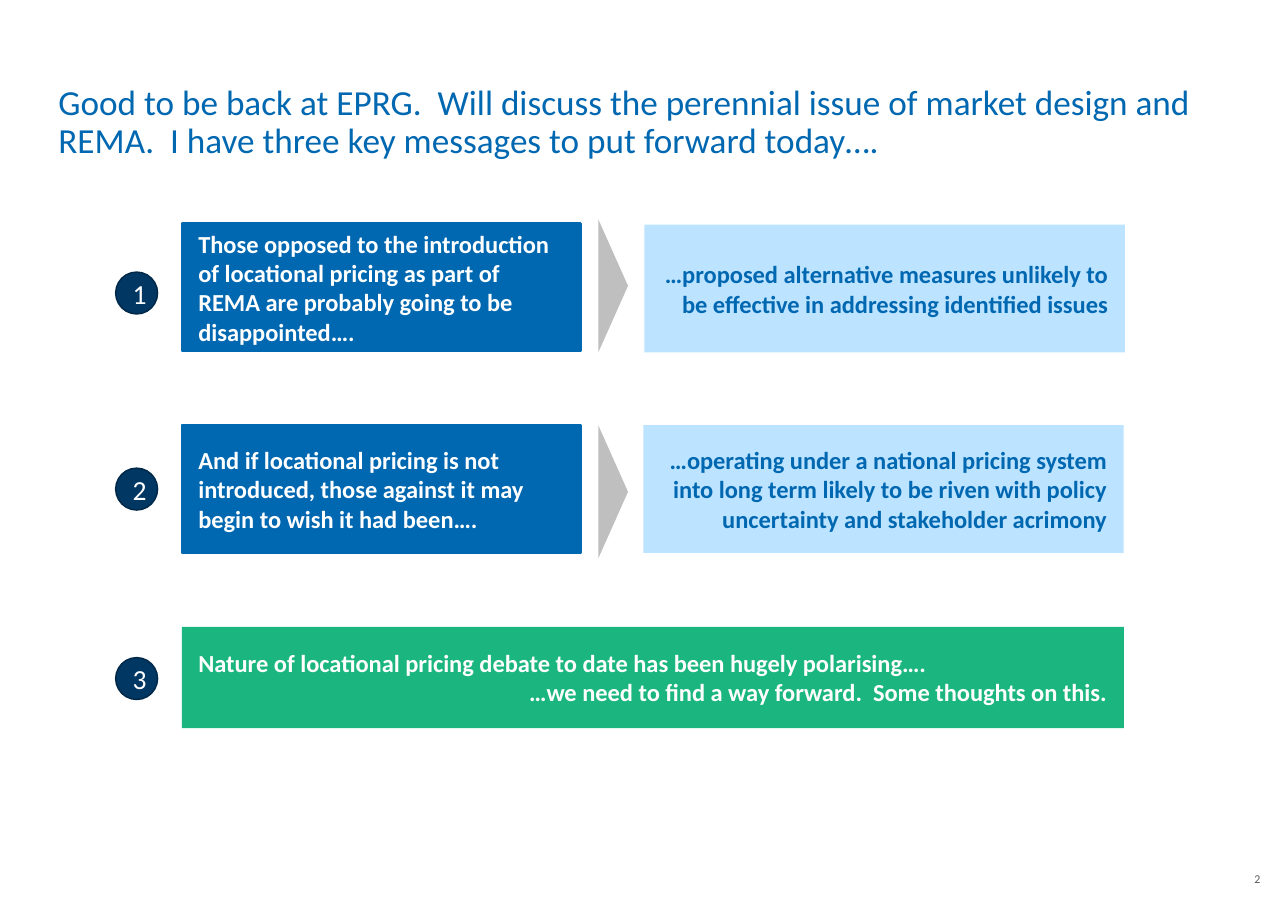
from dataclasses import dataclass

from pptx import Presentation, util as u
from pptx.dml.color import RGBColor
from pptx.enum import shapes, text

PX = u.Inches(1) // 100  # 100 px to the inch
FONT = "Calibri"
COLOURS = {
    "blue": "0067B1",
    "pale": "BCE3FF",
    "green": "1BB680",
    "navy": "003763",
    "outline": "002949",
    "arrow": "BFBFBF",
    "grey": "58595B",
    "white": "FFFFFF",
}
LEFT, CENTRE, RIGHT = text.PP_ALIGN.LEFT, text.PP_ALIGN.CENTER, text.PP_ALIGN.RIGHT
MIDDLE, BOTTOM = text.MSO_ANCHOR.MIDDLE, text.MSO_ANCHOR.BOTTOM
RECTANGLE = shapes.MSO_SHAPE.RECTANGLE
OVAL = shapes.MSO_SHAPE.OVAL
TRIANGLE = shapes.MSO_SHAPE.ISOSCELES_TRIANGLE


@dataclass
class Line:
    words: str
    align: text.PP_ALIGN = LEFT


@dataclass
class Style:
    size: float
    colour: str
    bold: bool = False
    anchor: text.MSO_ANCHOR = MIDDLE
    insets: tuple[int, int] = (0, 0)  # horizontal, vertical
    spacing: float = 1.0


@dataclass
class Block:
    kind: shapes.MSO_SHAPE
    box: tuple[int, int, int, int]
    fill: str
    line: str | None = None
    line_width: float = 1.5
    rotation: int = 0


@dataclass
class Message:
    badge_top: int
    claim_top: int
    reply_left: int
    reply_top: int
    arrow_top: int
    claim: str
    reply: str


TITLE = Style(23, "blue", anchor=BOTTOM, spacing=0.9)
PAGE = Style(7.8, "grey", anchor=BOTTOM)
BADGE = Style(18, "white", insets=(10, 5))
ON_DARK = Style(16, "white", bold=True, insets=(15, 15))
ON_PALE = Style(16, "blue", bold=True, insets=(15, 15))

MESSAGES = [
    Message(247, 203, 585, 204, 246,
            "Those opposed to the introduction of locational pricing as part of "
            "REMA are probably going to be disappointed….",
            "…proposed alternative measures unlikely to be effective in "
            "addressing identified issues"),
    Message(425, 386, 584, 386, 433,
            "And if locational pricing is not introduced, those against it may "
            "begin to wish it had been….",
            "…operating under a national pricing system into long term likely "
            "to be riven with policy uncertainty and stakeholder acrimony"),
]


def rgb(name: str) -> RGBColor:
    return RGBColor.from_string(COLOURS[name])


def emu(box: tuple[int, int, int, int]) -> list[int]:
    return [value * PX for value in box]


def write(shape, lines: list[Line], style: Style) -> None:
    frame = shape.text_frame
    across, down = (value * PX for value in style.insets)
    frame_format = {
        "word_wrap": True, "auto_size": text.MSO_AUTO_SIZE.NONE,
        "vertical_anchor": style.anchor,
        "margin_left": across, "margin_right": across,
        "margin_top": down, "margin_bottom": down,
    }
    for name, value in frame_format.items():
        setattr(frame, name, value)
    font_format = {"name": FONT, "size": u.Pt(style.size), "bold": style.bold}
    for index, line in enumerate(lines):
        paragraph = frame.add_paragraph() if index else frame.paragraphs[0]
        paragraph.alignment = line.align
        paragraph.line_spacing = style.spacing
        run = paragraph.add_run()
        run.text = line.words
        for name, value in font_format.items():
            setattr(run.font, name, value)
        run.font.color.rgb = rgb(style.colour)


def draw(slide, block: Block):
    shape = slide.shapes.add_shape(block.kind, *emu(block.box))
    shape.shadow.inherit = False
    shape.rotation = block.rotation
    shape.fill.solid()
    shape.fill.fore_color.rgb = rgb(block.fill)
    if block.line:
        shape.line.color.rgb = rgb(block.line)
        shape.line.width = u.Pt(block.line_width)
    else:
        shape.line.fill.background()
    return shape


def draw_badge(slide, number: int, top: int) -> None:
    badge = draw(slide, Block(OVAL, (105, top, 38, 38), "navy", "outline", 1))
    write(badge, [Line(str(number), CENTRE)], BADGE)


def draw_message(slide, number: int, message: Message) -> None:
    draw_badge(slide, number, message.badge_top)
    claim = draw(slide, Block(RECTANGLE, (165, message.claim_top, 362, 116), "blue", "blue"))
    write(claim, [Line(message.claim)], ON_DARK)
    draw(slide, Block(TRIANGLE, (496, message.arrow_top, 121, 27), "arrow", rotation=90))
    reply = draw(slide, Block(RECTANGLE, (message.reply_left, message.reply_top, 436, 116), "pale"))
    write(reply, [Line(message.reply, RIGHT)], ON_PALE)


def main() -> None:
    presentation = Presentation()
    presentation.slide_width, presentation.slide_height = 1169 * PX, 827 * PX
    slide = presentation.slides.add_slide(presentation.slide_layouts[5])

    # Title
    title = slide.shapes.title
    title.left, title.top, title.width, title.height = emu((53, 73, 1072, 73))
    write(title, [Line("Good to be back at EPRG.  Will discuss the perennial issue of "
                       "market design and REMA.  I have three key messages to put "
                       "forward today….")], TITLE)

    # Messages with a claim and a reply
    for number, message in enumerate(MESSAGES, start=1):
        draw_message(slide, number, message)

    # Closing message across the full width
    draw_badge(slide, len(MESSAGES) + 1, 597)
    closing = draw(slide, Block(RECTANGLE, (165, 569, 855, 92), "green"))
    write(closing, [
        Line("Nature of locational pricing debate to date has been hugely polarising…."),
        Line("…we need to find a way forward.  Some thoughts on this.", RIGHT),
    ], ON_DARK)

    # Page number
    page = slide.shapes.add_textbox(*emu((1094, 767, 50, 37)))
    write(page, [Line("2", RIGHT)], PAGE)

    presentation.save("out.pptx")


if __name__ == "__main__":
    main()
